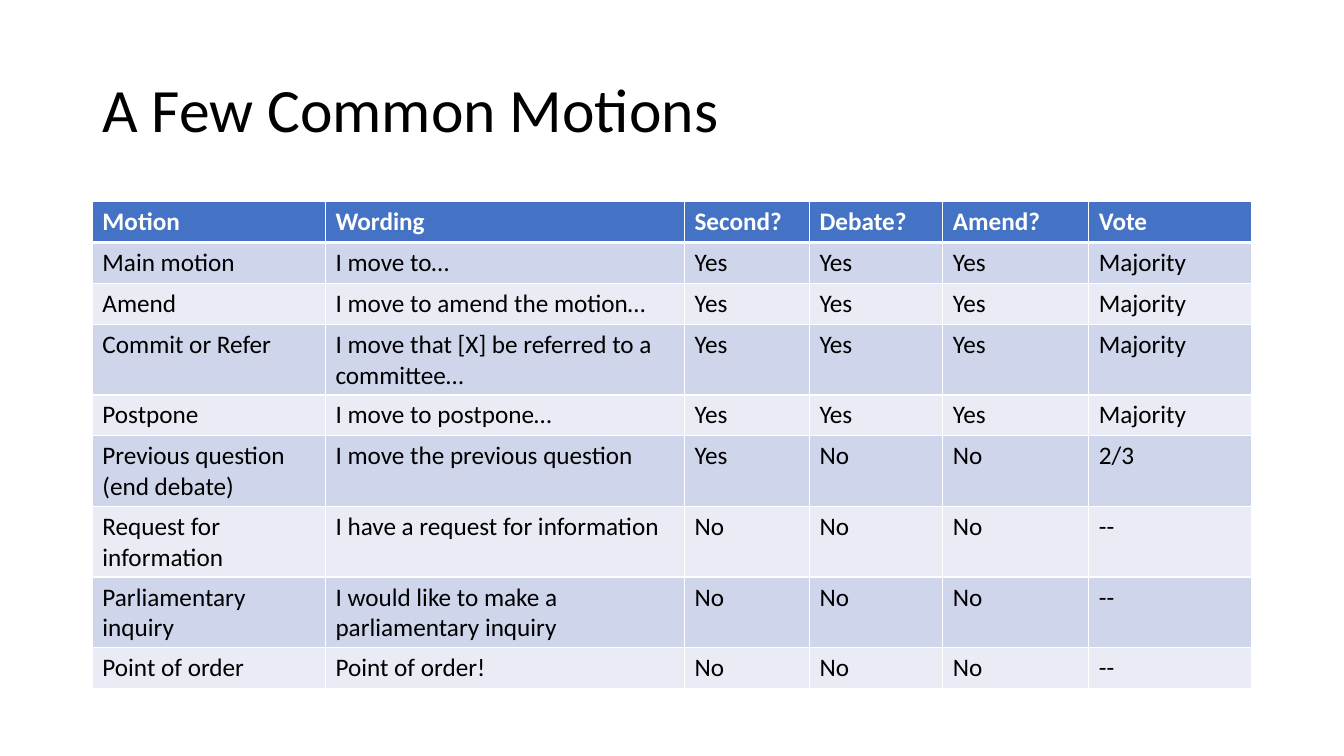
from collections import namedtuple

from lxml.etree import SubElement
from pptx import Presentation
from pptx.dml.color import RGBColor as Rgb
from pptx.enum.text import MSO_ANCHOR as Anchor
from pptx.oxml.ns import qn
from pptx.util import Pt

PX = 9525
FONT = "Calibri"
COLORS = {
    "text": "000000",
    "header_text": "FFFFFF",
    "header": "4472C4",
    "odd_row": "CFD5EA",
    "even_row": "E9EBF5",
    "border": "FFFFFF",
}
Box = namedtuple("Box", "left top width height")
TITLE_BOX = Box(88, 38, 1104, 139)
TABLE_BOX = Box(88, 192, 1104, 464)
COLUMN_WIDTHS = [222, 342, 119, 127, 139, 155]
ROW_HEIGHT = 39
MOTIONS = [
    ("Motion", "Wording", "Second?", "Debate?", "Amend?", "Vote"),
    ("Main motion", "I move to…", "Yes", "Yes", "Yes", "Majority"),
    ("Amend", "I move to amend the motion…", "Yes", "Yes", "Yes", "Majority"),
    ("Commit or Refer", "I move that [X] be referred to a committee…",
     "Yes", "Yes", "Yes", "Majority"),
    ("Postpone", "I move to postpone…", "Yes", "Yes", "Yes", "Majority"),
    ("Previous question (end debate)", "I move the previous question",
     "Yes", "No", "No", "2/3"),
    ("Request for information", "I have a request for information",
     "No", "No", "No", "--"),
    ("Parliamentary inquiry", "I would like to make a parliamentary inquiry",
     "No", "No", "No", "--"),
    ("Point of order", "Point of order!", "No", "No", "No", "--"),
]


def to_emu(box):
    return [length * PX for length in box]


def write(frame, text, size, color, bold=False):
    frame.text = text
    para = frame.paragraphs[0]
    for span in para.runs:
        span.font.name = FONT
        span.font.size = Pt(size)
        span.font.bold = bold
        span.font.color.rgb = Rgb.from_string(COLORS[color])
    return para


def add_title(page, box, text):
    frame = page.shapes.add_textbox(*to_emu(box)).text_frame
    frame.word_wrap = True
    frame.vertical_anchor = Anchor.MIDDLE
    write(frame, text, 44, "text").line_spacing = 0.9


def set_borders(cell, widths):
    properties = cell._tc.get_or_add_tcPr()
    for side, width in widths.items():
        line = SubElement(properties, qn(f"a:ln{side}"), w=str(Pt(width)))
        fill = SubElement(line, qn("a:solidFill"))
        SubElement(fill, qn("a:srgbClr"), val=COLORS["border"])


def style_cell(cell, text, row):
    is_header = row == 0
    set_borders(cell, {"L": 1, "R": 1, "T": 3 if row == 1 else 1, "B": 3 if is_header else 1})
    background = "header" if is_header else "odd_row" if row % 2 else "even_row"
    cell.fill.solid()
    cell.fill.fore_color.rgb = Rgb.from_string(COLORS[background])
    write(cell.text_frame, text, 18, "header_text" if is_header else "text", is_header)


def add_motion_table(page, box, motions):
    holder = page.shapes.add_table(len(motions), len(COLUMN_WIDTHS), *to_emu(box))
    table = holder.table
    for column, width in zip(table.columns, COLUMN_WIDTHS):
        column.width = width * PX
    for row, motion in enumerate(motions):
        table.rows[row].height = ROW_HEIGHT * PX
        for column, text in enumerate(motion):
            style_cell(table.cell(row, column), text, row)
    holder.height = box.height * PX


def main():
    deck = Presentation()
    deck.slide_width, deck.slide_height = 1280 * PX, 720 * PX
    page = deck.slides.add_slide(deck.slide_layouts[6])
    add_title(page, TITLE_BOX, "A Few Common Motions")
    add_motion_table(page, TABLE_BOX, MOTIONS)
    deck.save("out.pptx")


if __name__ == "__main__":
    main()
